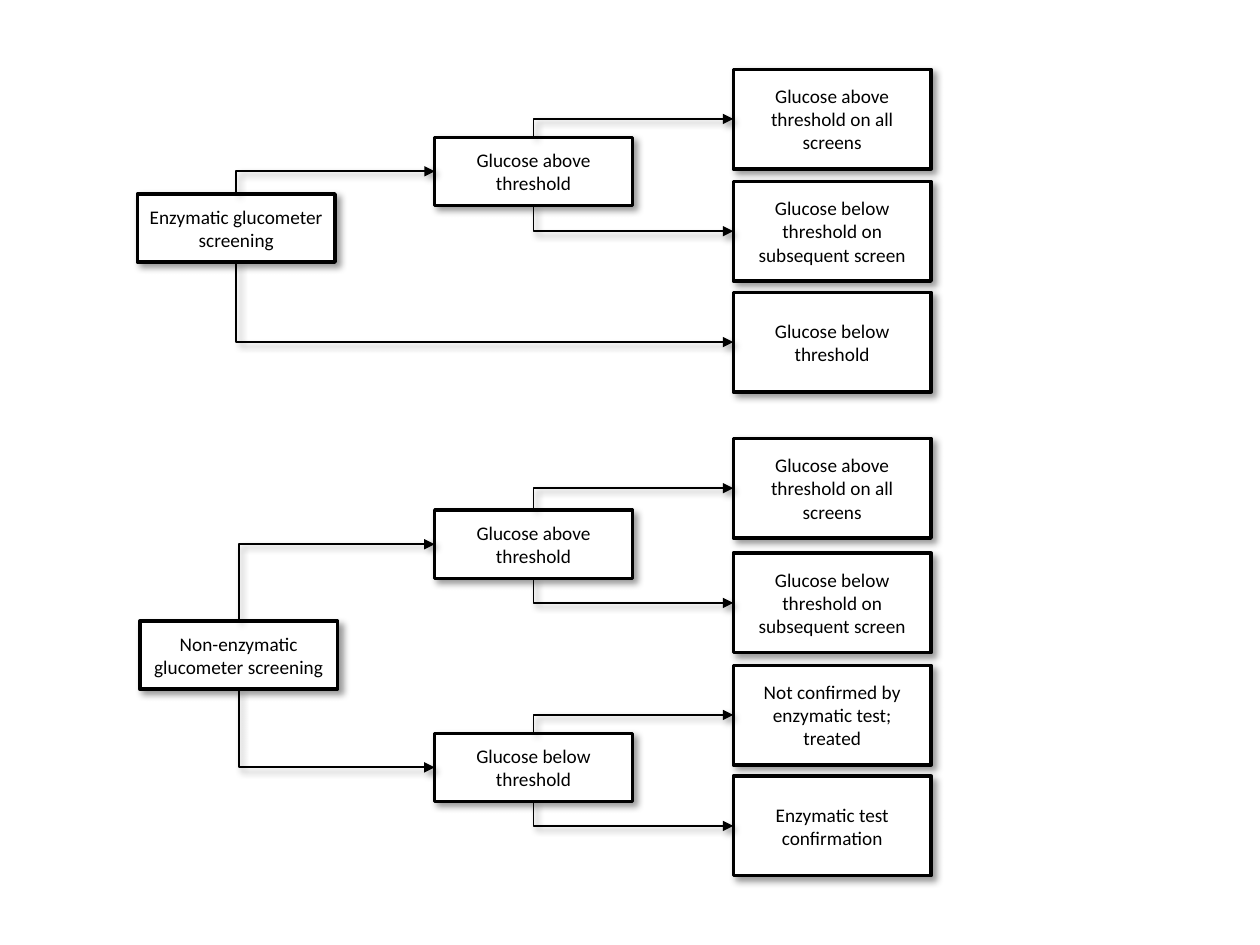
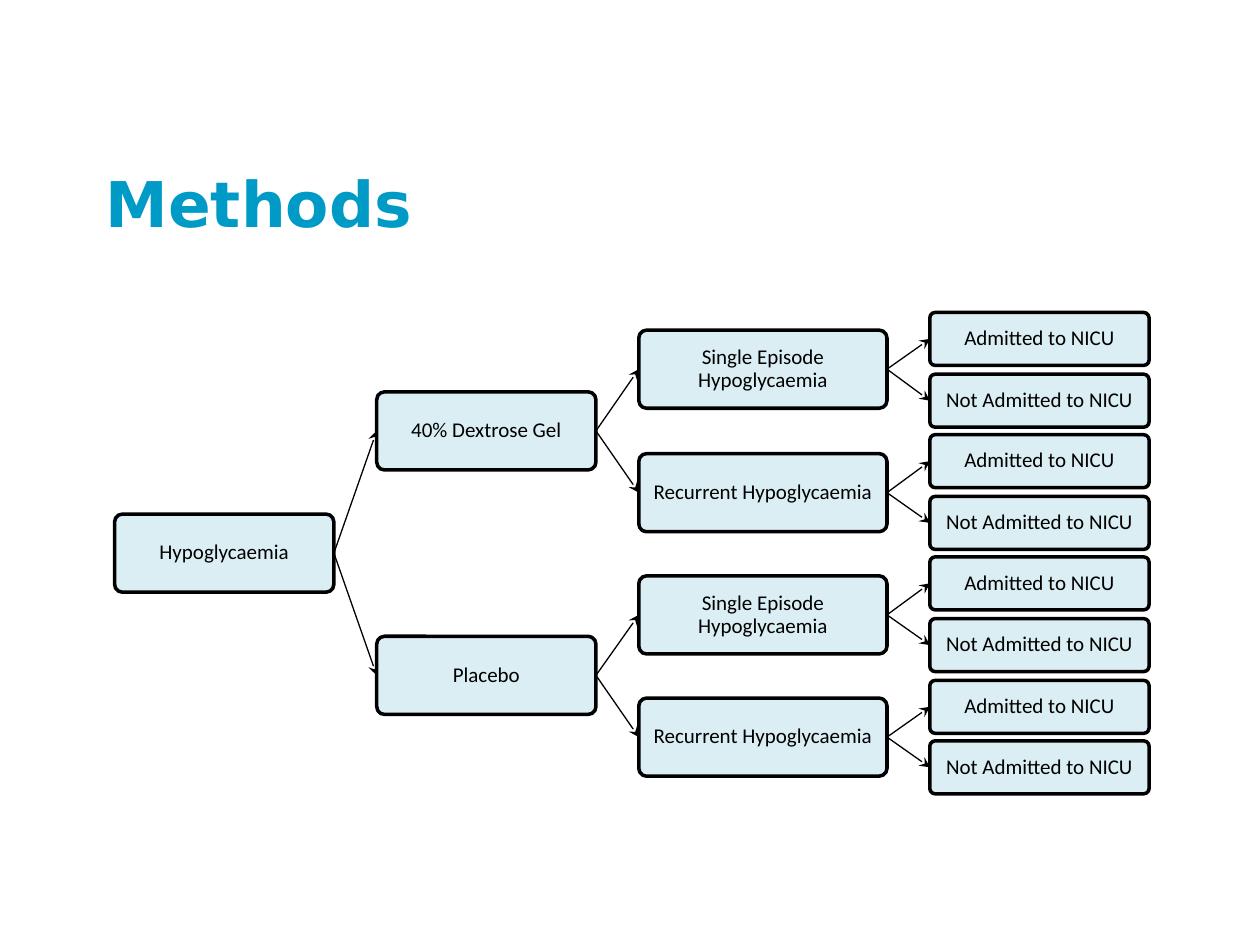
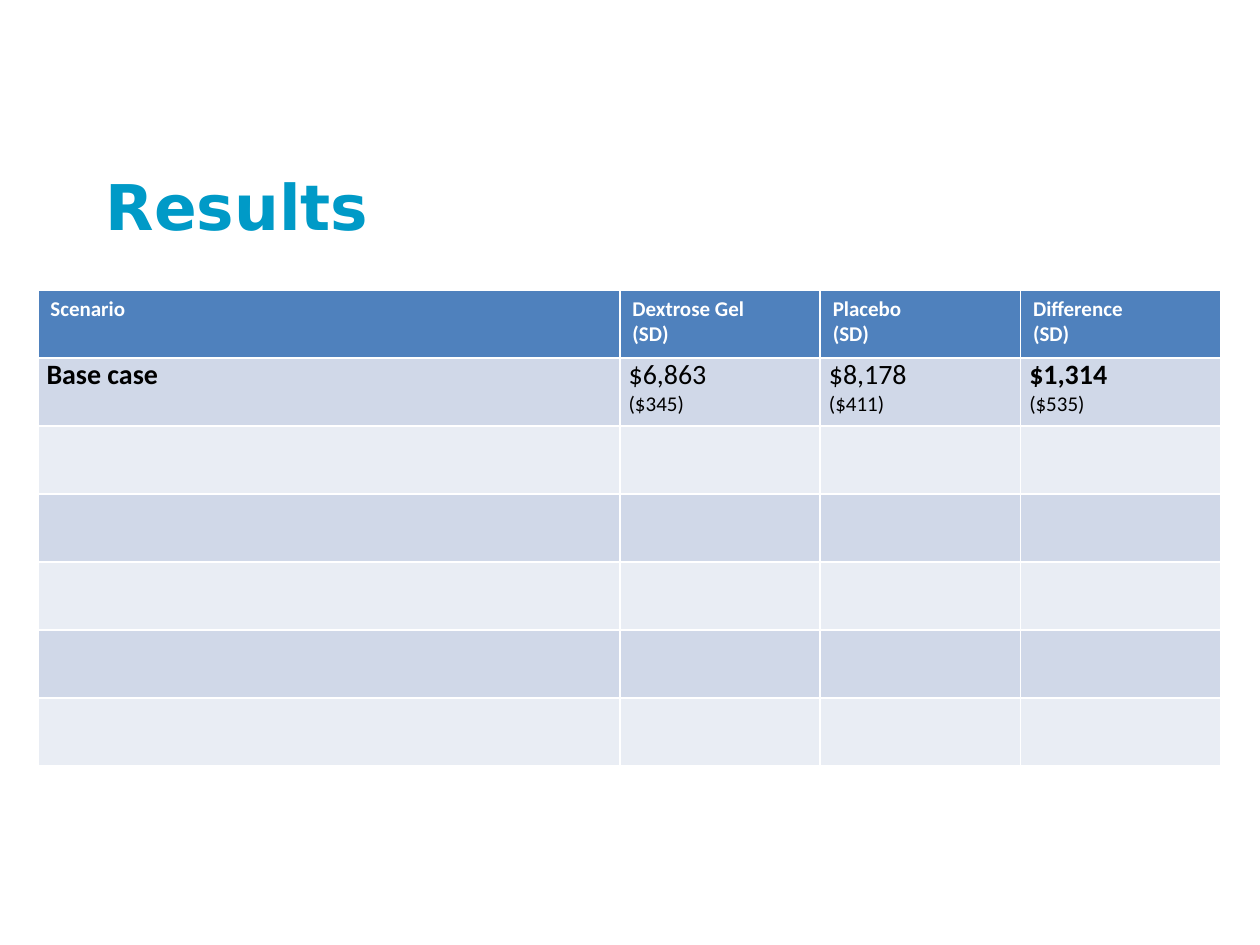
from pptx import Presentation
from pptx.dml.color import RGBColor
from pptx.enum.shapes import MSO_CONNECTOR, MSO_SHAPE
from pptx.enum.text import MSO_ANCHOR, PP_ALIGN
from pptx.oxml import parse_xml
from pptx.oxml.ns import nsdecls, qn
from pptx.util import Pt

PX = 9144  # 100 px to the inch
BLACK, WHITE, TITLE = "000000", "FFFFFF", "009AC7"
HEAD, DARK, LIGHT, PALE = "4F81BD", "D0D8E8", "E9EDF4", "DBEEF4"
SHADE = (f'<a:effectLst {nsdecls("a")}><a:outerShdw blurRad="50800" dist="38100" '
         'dir="2700000" algn="tl" rotWithShape="0"><a:srgbClr val="000000">'
         '<a:alpha val="40000"/></a:srgbClr></a:outerShdw></a:effectLst>')
PLAIN = f'<a:effectLst {nsdecls("a")}/>'


def rgb(code):
    return RGBColor.from_string(code)


def style(font, **look):
    look = {"name": "Calibri", "size": 12, "bold": False, "color": BLACK} | look
    font.color.rgb = rgb(look.pop("color"))
    look["size"] = Pt(look["size"])
    for key, value in look.items():
        setattr(font, key, value)


deck = Presentation()
deck.slide_width, deck.slide_height = 1000 * PX, 750 * PX
screen, method, result = [deck.slides.add_slide(deck.slide_layouts[6]) for _ in range(3)]

# Boxes of both trees: slide, key, left, top, width, height, text
ABOVE, BELOW = "Glucose above threshold", "Glucose below threshold"
ALL, LATER = ABOVE + " on all screens", BELOW + " on subsequent screen"
nodes = [
    (screen, "enzyme", 109, 154, 157, 54, "Enzymatic glucometer screening"),
    (screen, "other", 111, 493, 157, 54, "Non-enzymatic glucometer screening"),
]
for key, top, text in [("high", 109, ABOVE), ("high2", 405, ABOVE), ("low2", 582, BELOW)]:
    nodes.append((screen, key, 345, top, 157, 54, text))
for key, top, text in [
    ("all", 55, ALL), ("later", 144, LATER), ("low", 232, BELOW),
    ("all2", 348, ALL), ("later2", 439, LATER),
    ("treat", 528, "Not confirmed by enzymatic test; treated"),
    ("proof", 616, "Enzymatic test confirmation"),
]:
    nodes.append((screen, key, 582, top, 157, 79, text))

# Each level of the methods tree has twice the boxes of the one before
levels = [
    (91, 174, 62, ["Hypoglycaemia"]),
    (299, 174, 62, ["40% Dextrose Gel", "Placebo"]),
    (507, 197, 62, ["Single Episode Hypoglycaemia", "Recurrent Hypoglycaemia"]),
    (738, 174, 42, ["Admitted to NICU", "Not Admitted to NICU"]),
]
for level, (left, wide, high, texts) in enumerate(levels):
    count = 2 ** level
    for row in range(count):
        mid = 269 + 48.6 * ((row + 0.5) * 8 / count - 0.5)
        nodes.append((method, (level, row), left, round(mid - high / 2), wide, high,
                      texts[row % len(texts)]))

boxes = {}
for slide, key, left, top, wide, high, text in nodes:
    flow = slide is screen
    kind = MSO_SHAPE.RECTANGLE if flow else MSO_SHAPE.ROUNDED_RECTANGLE
    box = slide.shapes.add_shape(kind, left * PX, top * PX, wide * PX, high * PX)
    boxes[key] = box
    box.fill.solid()
    box.fill.fore_color.rgb = rgb(WHITE if flow else PALE)
    box.line.color.rgb = rgb(BLACK)
    box.line.width = Pt(2)
    box.shadow.inherit = False
    frame = box.text_frame
    frame.word_wrap = True
    frame.vertical_anchor = MSO_ANCHOR.MIDDLE
    para = frame.paragraphs[0]
    para.alignment = PP_ALIGN.CENTER
    if flow:
        props = box._element.spPr
        props.replace(props.find(qn("a:effectLst")), parse_xml(SHADE))
    else:
        box.adjustments[0] = 0.1
        para.line_spacing = 0.9
        for side in ("left", "top", "right", "bottom"):
            setattr(frame, "margin_" + side, 3 * PX)
    run = para.add_run()
    run.text = text
    style(run.font, size=11 if flow else 12)

# Arrows: slide, from, to, side left (0 top, 2 bottom, 3 right)
links = []
for start, up, down in [("enzyme", "high", "low"), ("high", "all", "later"),
                        ("other", "high2", "low2"), ("high2", "all2", "later2"),
                        ("low2", "treat", "proof")]:
    links += [(screen, start, up, 0), (screen, start, down, 2)]
for level in range(3):
    for row in range(2 ** (level + 1)):
        links.append((method, (level, row // 2), (level + 1, row), 3))

for slide, start, end, side in links:
    flow = slide is screen
    kind = MSO_CONNECTOR.ELBOW if flow else MSO_CONNECTOR.STRAIGHT
    line = slide.shapes.add_connector(kind, 0, 0, 0, 0)
    line.begin_connect(boxes[start], side)
    line.end_connect(boxes[end], 1)
    line.line.color.rgb = rgb(BLACK)
    line.line.width = Pt(1 if flow else 0.75)
    props = line._element.spPr
    if flow:
        # One bend, vertical leg first: a turned frame with its sides swapped
        wide, high = line.width, line.height
        midx, midy = line.left + wide // 2, line.top + high // 2
        line.left, line.top = midx - high // 2, midy - wide // 2
        line.width, line.height = high, wide
        props.find(qn("a:prstGeom")).set("prst", "bentConnector2")
        turn = {"rot": "5400000" if side == 0 else "16200000",
                "flipH": "1", "flipV": "1" if side == 0 else "0"}
        for name, value in turn.items():
            props.find(qn("a:xfrm")).set(name, value)
    tip = "triangle" if flow else "stealth"
    props.find(qn("a:ln")).append(parse_xml(f'<a:tailEnd {nsdecls("a")} type="{tip}"/>'))
    props.append(parse_xml(SHADE if flow else PLAIN))

# Results table: each cell is a list of lines (text, size, bold)
heads = [["Scenario"], ["Dextrose Gel", "(SD)"], ["Placebo", "(SD)"], ["Difference", "(SD)"]]
rows = [
    [[(text, 12, True) for text in head] for head in heads],
    [[("Base case", 16, True)],
     [("$6,863", 16, False), ("($345)", 12, False)],
     [("$8,178", 16, False), ("($411)", 12, False)],
     [("$1,314", 16, True), ("($535)", 12, False)]],
] + [[[]] * 4] * 5
table = result.shapes.add_table(7, 4, 30 * PX, 230 * PX, 941 * PX, 381 * PX).table
for col, wide in zip(table.columns, (462, 159, 159, 159)):
    col.width = wide * PX
for r, row in enumerate(rows):
    table.rows[r].height = 54 * PX
    for c, lines in enumerate(row):
        cell = table.cell(r, c)
        cell.fill.solid()
        cell.fill.fore_color.rgb = rgb(HEAD if r == 0 else DARK if r % 2 else LIGHT)
        if r == 1:
            cell.margin_left = cell.margin_right = 7 * PX
            cell.margin_top = cell.margin_bottom = 0
        para = cell.text_frame.paragraphs[0]
        for i, (text, size, bold) in enumerate(lines):
            if i:
                para.add_line_break()
            run = para.add_run()
            run.text = text
            style(run.font, size=size, bold=bold, color=BLACK if r else WHITE)

# Titles
for slide, text, top, wide in [(method, "Methods", 126, 847), (result, "Results", 128, 478)]:
    frame = slide.shapes.add_textbox(74 * PX, top * PX, wide * PX, 72 * PX).text_frame
    frame.word_wrap = True
    run = frame.paragraphs[0].add_run()
    run.text = text
    style(run.font, name="DejaVu Sans", size=36, bold=True, color=TITLE)

deck.save("out.pptx")
